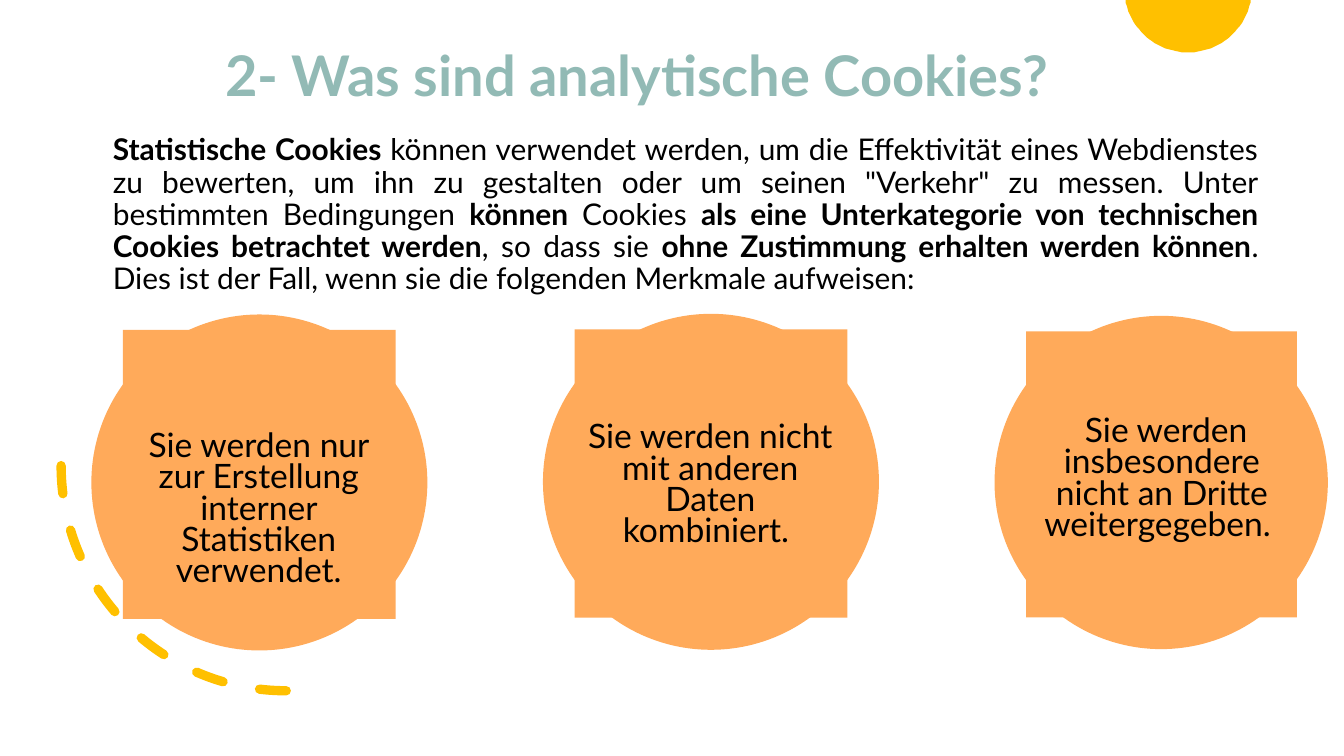
"""Build the slide on analytical cookies."""
from math import cos, pi, sin

from pptx import Presentation
from pptx.dml.color import RGBColor
from pptx.enum.dml import MSO_LINE
from pptx.enum.shapes import MSO_SHAPE
from pptx.enum.text import MSO_ANCHOR, PP_ALIGN
from pptx.util import Pt

PX = 9144
OVAL, RECT, ARC = MSO_SHAPE.OVAL, MSO_SHAPE.RECTANGLE, MSO_SHAPE.ARC
CENTER, JUST = PP_ALIGN.CENTER, PP_ALIGN.JUSTIFY
TOP, MIDDLE = MSO_ANCHOR.TOP, MSO_ANCHOR.MIDDLE
GOLD, ORANGE, TEAL, BLACK = "FFC000", "FFAA5A", "92BAB5", "000000"


def paint(shape, color):
    shape.shadow.inherit = False
    shape.fill.solid()
    shape.fill.fore_color.rgb = RGBColor.from_string(color)
    shape.line.fill.background()


def write(box, runs, size, color, para, frame):
    text = slide.shapes.add_textbox(*[n * PX for n in box]).text_frame
    for key, val in {"word_wrap": True, **frame}.items():
        setattr(text, key, val)
    line = text.paragraphs[0]
    for key, val in para.items():
        setattr(line, key, val)
    for words, bold in runs:
        run = line.add_run()
        run.text = words
        font = {"name": "Lato", "size": Pt(size), "bold": bold}
        for key, val in font.items():
            setattr(run.font, key, val)
        run.font.color.rgb = RGBColor.from_string(color)


deck = Presentation()
deck.slide_width, deck.slide_height = 2000 * PX, 1125 * PX
slide = deck.slides.add_slide(deck.slide_layouts[6])

steps = 60
start = 0.18
turns = [start + (pi - 2 * start) * i / steps for i in range(steps + 1)]
curve = [(1768 + 95 * cos(t), -17 + 95 * sin(t)) for t in turns]
sun = slide.shapes.build_freeform(1861, 0, scale=PX)
sun.add_line_segments(curve + [(1675, 0)], close=True)
paint(sun.convert_to_shape(), GOLD)

write((33, 60, 1829, 114), [("2- Was sind analytische Cookies?", True)], 60, TEAL,
      {"alignment": CENTER, "line_spacing": 0.9, "space_after": Pt(9)},
      {"vertical_anchor": MIDDLE})

arc = slide.shapes.add_shape(ARC, 91 * PX, 358 * PX, 670 * PX, 670 * PX)
arc.shadow.inherit = False
arc.rotation = 90
arc.element.spPr.xfrm.set("flipV", "1")
arc.fill.background()
arc.line.color.rgb = RGBColor.from_string(GOLD)
arc.line.width = Pt(10)
arc.line.dash_style = MSO_LINE.DASH
arc.line.fill._xPr.set("cap", "rnd")

body = [
    ("Statistische Cookies ", True),
    ("können verwendet werden, um die Effektivität eines Webdienstes zu bewerten, "
     "um ihn zu gestalten oder um seinen \"Verkehr\" zu messen. "
     "Unter bestimmten Bedingungen ", False),
    ("können ", True),
    ("Cookies ", False),
    ("als eine Unterkategorie von technischen Cookies betrachtet werden", True),
    (", so dass sie ", False),
    ("ohne Zustimmung erhalten werden können", True),
    (". Dies ist der Fall, wenn sie die folgenden Merkmale aufweisen:", False),
]
write((158, 196, 1725, 267), body, 32, BLACK,
      {"alignment": JUST, "line_spacing": 0.9, "space_before": Pt(15),
       "space_after": Pt(9)}, {"vertical_anchor": TOP})

cards = [
    (136, 468, 500, 406, 430, 644, 145,
     "Sie werden nur zur Erstellung interner Statistiken verwendet."),
    (808, 467, 500, 406, 429, 631, 191,
     "Sie werden nicht mit anderen Daten kombiniert. "),
    (1480, 470, 496, 403, 426, 622, 193,
     " Sie werden insbesondere nicht an Dritte weitergegeben. "),
]
flush = {"margin_left": 0, "margin_right": 0, "margin_top": 0, "margin_bottom": 0}
for left, top, size, wide, high, y, tall, words in cards:
    parts = [(OVAL, (left, top, size, size)),
             (RECT, (left + 47, top + 23, wide, high))]
    for kind, box in parts:
        paint(slide.shapes.add_shape(kind, *[n * PX for n in box]), ORANGE)
    write((left + 54, y, 390, tall), [(words, False)], 36, BLACK,
          {"alignment": CENTER, "line_spacing": Pt(33.6)}, flush)

deck.save("out.pptx")
